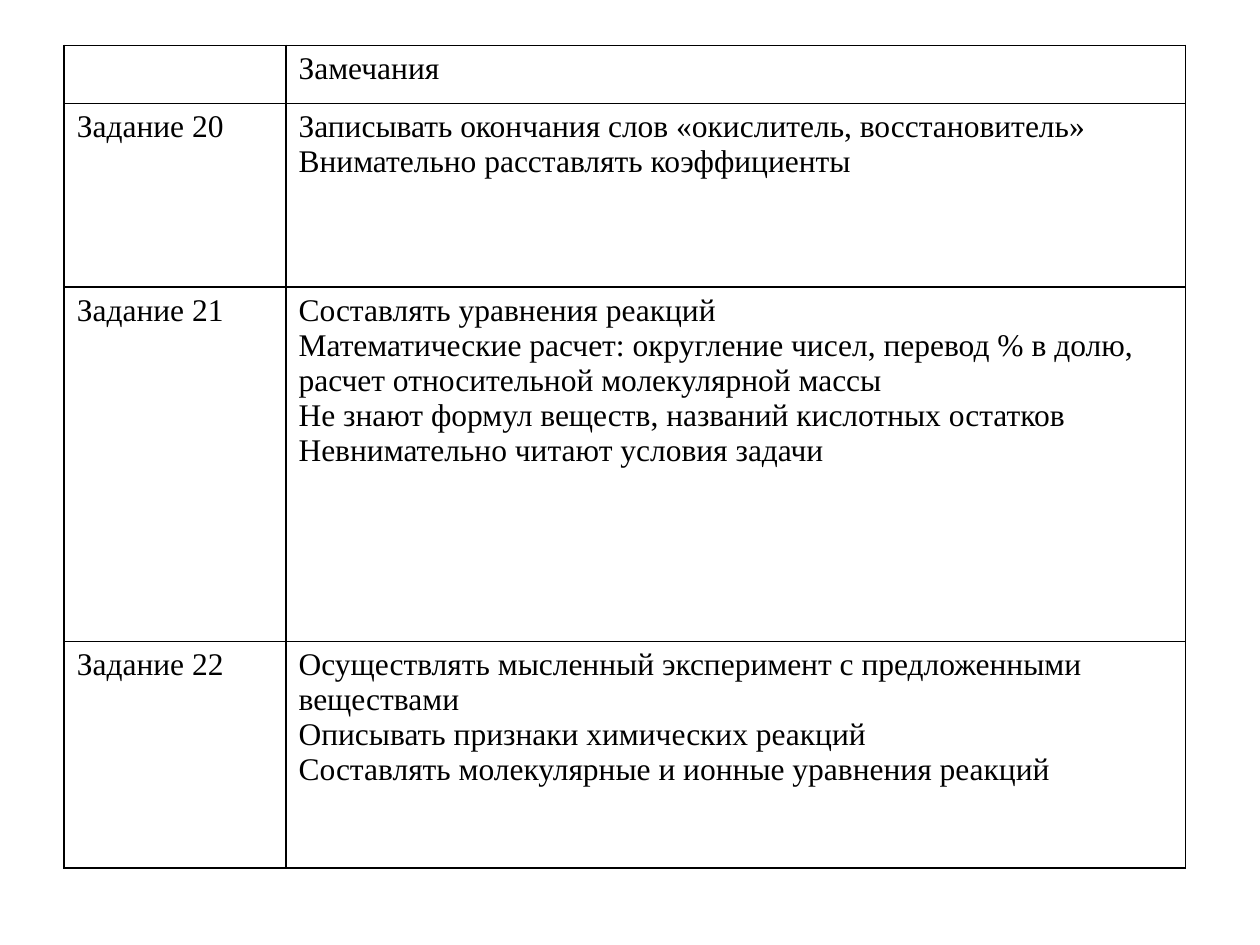
import dataclasses

import pptx
import pptx.dml.color
import pptx.oxml.ns
import pptx.table
import pptx.util
from lxml import etree

Inches = pptx.util.Inches
BLACK = pptx.dml.color.RGBColor(0x00, 0x00, 0x00)
TEXT_FORMAT = {"name": "Times New Roman", "size": pptx.util.Pt(18), "bold": False}
PLAIN_TABLE = {"first_row": False, "horz_banding": False}
COLUMN_WIDTHS = (1.76, 7.14)
BORDER_WIDTH = pptx.util.Pt(1)


@dataclasses.dataclass
class TaskRow:
    height: float
    task: str
    remarks: tuple[str, ...]


TASK_ROWS = (
    TaskRow(0.46, "", ("Замечания",)),
    TaskRow(1.46, "Задание 20", (
        "Записывать окончания слов «окислитель, восстановитель»",
        "Внимательно расставлять коэффициенты",
    )),
    TaskRow(2.81, "Задание 21", (
        "Составлять уравнения реакций",
        "Математические расчет: округление чисел, перевод % в долю, "
        "расчет относительной молекулярной массы",
        "Не знают формул веществ, названий кислотных остатков",
        "Невнимательно читают условия задачи",
    )),
    TaskRow(1.8, "Задание 22", (
        "Осуществлять мысленный эксперимент с предложенными веществами",
        "Описывать признаки химических реакций",
        "Составлять молекулярные и ионные уравнения реакций",
    )),
)


def add_borders(cell: pptx.table._Cell) -> None:
    """Draw a thin solid line on all four sides of a cell."""
    qn = pptx.oxml.ns.qn
    properties = cell._tc.get_or_add_tcPr()
    for side in ("a:lnL", "a:lnR", "a:lnT", "a:lnB"):
        line = etree.SubElement(properties, qn(side), w=str(int(BORDER_WIDTH)))
        fill = etree.SubElement(line, qn("a:solidFill"))
        etree.SubElement(fill, qn("a:srgbClr"), val=str(BLACK))


def write_cell(cell: pptx.table._Cell, lines: tuple[str, ...]) -> None:
    """Style a cell and write one paragraph per line."""
    add_borders(cell)
    cell.fill.background()
    cell.text = "\n".join(lines)
    for para in cell.text_frame.paragraphs:
        para.font.size = TEXT_FORMAT["size"]
        for span in para.runs:
            for name, value in TEXT_FORMAT.items():
                setattr(span.font, name, value)
            span.font.color.rgb = BLACK


def main() -> None:
    deck = pptx.Presentation()
    deck.slide_width, deck.slide_height = Inches(10), Inches(7.5)
    page = deck.slides.add_slide(deck.slide_layouts[6])

    # Table grid
    table = page.shapes.add_table(
        len(TASK_ROWS), len(COLUMN_WIDTHS), Inches(0.51), Inches(0.36),
        Inches(sum(COLUMN_WIDTHS)), Inches(sum(row.height for row in TASK_ROWS)),
    ).table
    for name, value in PLAIN_TABLE.items():
        setattr(table, name, value)
    for column, width in zip(table.columns, COLUMN_WIDTHS):
        column.width = Inches(width)

    # Tasks and remarks
    for row, content in zip(table.rows, TASK_ROWS):
        row.height = Inches(content.height)
        write_cell(row.cells[0], (content.task,))
        write_cell(row.cells[1], content.remarks)

    deck.save("out.pptx")


if __name__ == "__main__":
    main()
